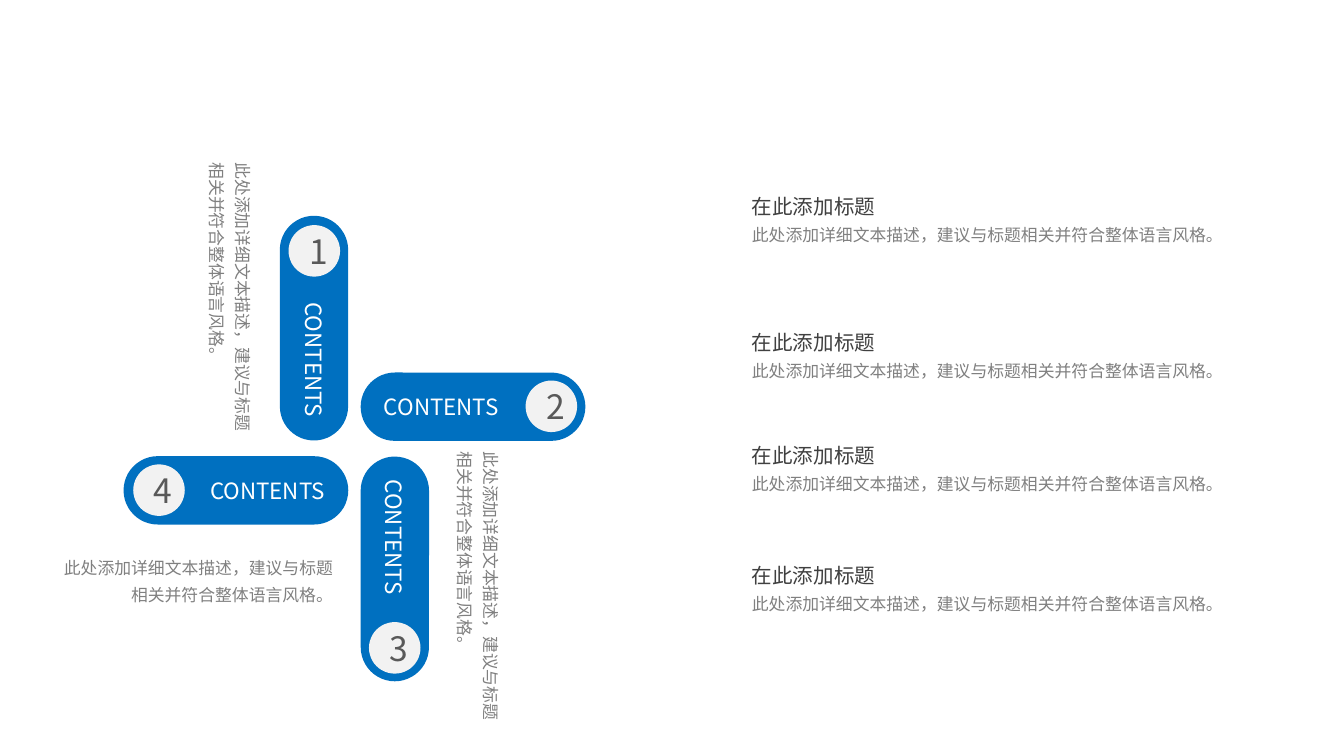
from lxml import etree
from pptx import Presentation
from pptx.dml.color import RGBColor
from pptx.enum import shapes, text
from pptx.oxml import ns
from pptx.util import Pt

FONT = "Noto Sans CJK SC"
HUES = {"blue": "0070C0", "disc": "F2F2F2", "digit": "595959",
        "white": "FFFFFF", "title": "404040", "body": "808080"}
BODY = "此处添加详细文本描述，建议与标题相关并符合整体语言风格。"
LEFT, MID, RIGHT = text.PP_ALIGN.LEFT, text.PP_ALIGN.CENTER, text.PP_ALIGN.RIGHT


def write(para, words, size, hue, align=LEFT, space=None):
    para.alignment = align
    para.line_spacing = space
    run = para.add_run()
    run.text = words
    run.font.size = Pt(size)
    run.font.color.rgb = RGBColor.from_string(HUES[hue])
    run.font.name = FONT
    east = etree.SubElement(run.font._element, ns.qn("a:ea"))
    east.set("typeface", FONT)


def add_box(left, top, width, height, turn=0):
    box = slide.shapes.add_textbox(Pt(left), Pt(top), Pt(width), Pt(height))
    box.rotation = turn
    frame = box.text_frame
    frame.word_wrap = True
    frame.auto_size = text.MSO_AUTO_SIZE.SHAPE_TO_FIT_TEXT
    frame.margin_left = frame.margin_right = Pt(5.4)
    frame.margin_top = frame.margin_bottom = Pt(2.7)
    return frame


deck = Presentation()
deck.slide_width, deck.slide_height = Pt(720), Pt(405)
slide = deck.slides.add_slide(deck.slide_layouts[6])

pills = [
    ("1", 108, 157.5, 90, RIGHT, 154.6, 120.6),
    ("3", 151.3, 286.5, 90, LEFT, 197.7, 333.3),
    ("2", 193.2, 199.6, 0, LEFT, 281.6, 203.9),
    ("4", 66.2, 244.4, 0, RIGHT, 71.4, 248.8),
]
for digit, left, top, turn, align, x, y in pills:
    pill = slide.shapes.add_shape(shapes.MSO_SHAPE.ROUNDED_RECTANGLE,
                                  Pt(left), Pt(top), Pt(120.4), Pt(36.6))
    pill.adjustments[0] = 0.5
    pill.rotation = turn
    disc = slide.shapes.add_shape(shapes.MSO_SHAPE.OVAL,
                                  Pt(x), Pt(y), Pt(27.6), Pt(27.6))
    for item, fill, words, size, hue, side in (
            (pill, "blue", "CONTENTS", 12, "white", align),
            (disc, "disc", digit, 18, "digit", MID)):
        item.shadow.inherit = False
        item.fill.solid()
        item.fill.fore_color.rgb = RGBColor.from_string(HUES[fill])
        item.line.fill.background()
        item.text_frame.vertical_anchor = text.MSO_ANCHOR.MIDDLE
        write(item.text_frame.paragraphs[0], words, size, hue, side)

for left, top, turn, align in ((180, 298.8, 90, LEFT), (26.6, 293, 0, RIGHT),
                               (46.8, 144, 90, LEFT)):
    frame = add_box(left, top, 157, 32.4, turn)
    write(frame.paragraphs[0], BODY, 9, "body", align, 1.3)

for top in (101.5, 174.2, 234.7, 298.8):
    frame = add_box(397.4, top, 275, 33.1)
    write(frame.paragraphs[0], "在此添加标题", 11, "title")
    write(frame.add_paragraph(), BODY, 9, "body", LEFT, 1.3)

deck.save("out.pptx")
